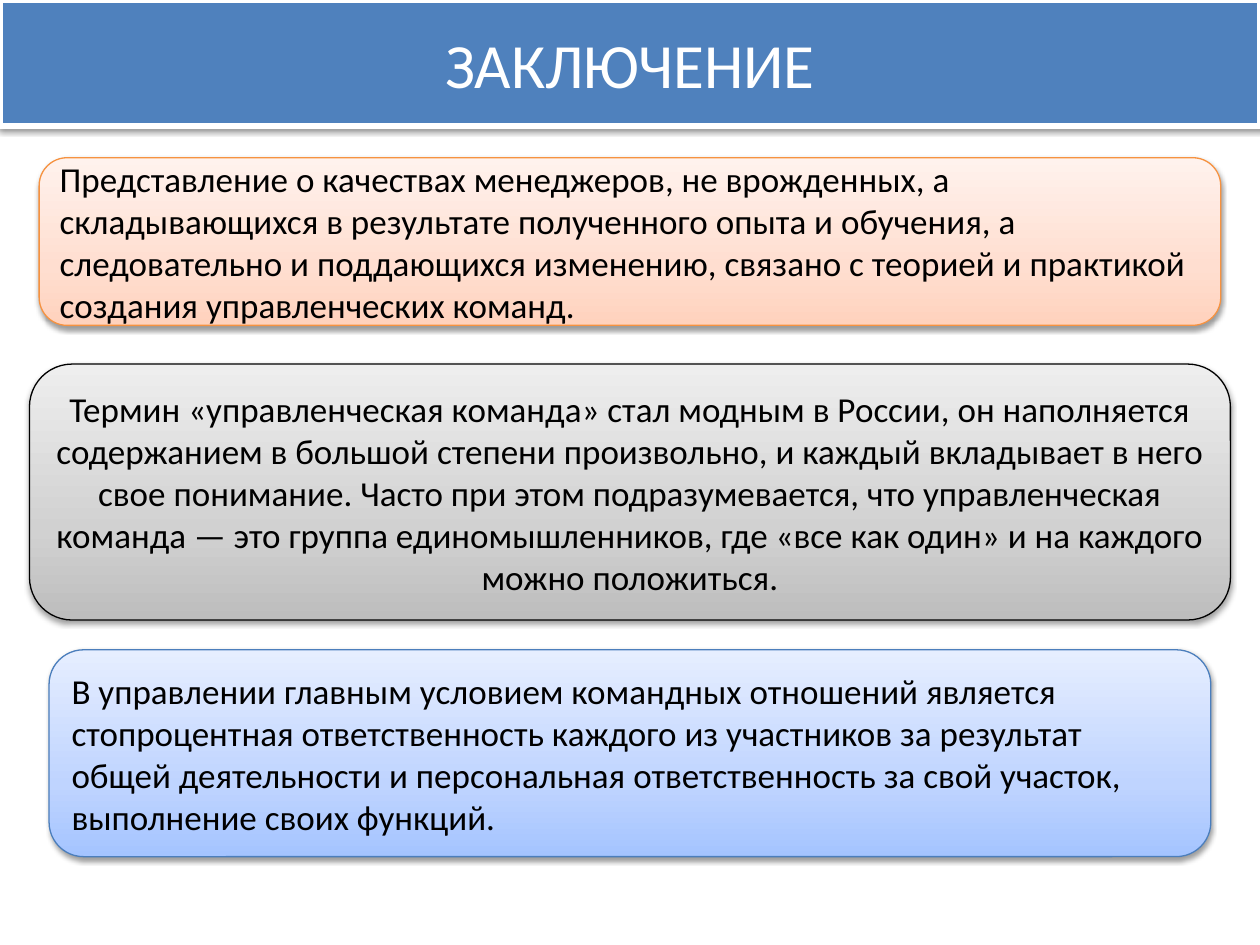
import pptx
import pptx.dml.color
import pptx.enum.shapes
import pptx.enum.text
import pptx.oxml
import pptx.oxml.ns
import pptx.util
from lxml import etree

Cm, Pt = pptx.util.Cm, pptx.util.Pt
qn = pptx.oxml.ns.qn
ALIGN = pptx.enum.text.PP_ALIGN

HUES = {
    "white": "FFFFFF", "black": "000000", "blue": "4F81BD",
    "orange": "F69240", "navy": "4B7EBC",
}
FADES = {
    "orange": ("FFD2BD", "FFDED0", "FFF2ED"),
    "black": ("BDBDBD", "D1D1D1", "EEEEEE"),
    "navy": ("A4C4FF", "BFD4FF", "E6EEFF"),
}
STOPS = (0, 35, 100)
WIDE, HIGH = 25.4, 19.05
HEAD = "ЗАКЛЮЧЕНИЕ"
CARDS = [
    ("orange", 3.18, 23.82, 3.38, ALIGN.LEFT,
     "Представление о качествах менеджеров, не врожденных, а складывающихся "
     "в результате полученного опыта и обучения, а следовательно и "
     "поддающихся изменению, связано с теорией и практикой создания "
     "управленческих команд."),
    ("black", 7.34, 24.21, 5.16, ALIGN.CENTER,
     "Термин «управленческая команда» стал модным в России, он наполняется "
     "содержанием в большой степени произвольно, и каждый вкладывает в него "
     "свое понимание. Часто при этом подразумевается, что управленческая "
     "команда — это группа единомышленников, где «все как один» и на каждого "
     "можно положиться."),
    ("navy", 13.1, 23.42, 4.17, ALIGN.LEFT,
     "В управлении главным условием командных отношений является "
     "стопроцентная ответственность каждого из участников за результат общей "
     "деятельности и персональная ответственность за свой участок, "
     "выполнение своих функций."),
]


def tint(name):
    return pptx.dml.color.RGBColor.from_string(HUES[name])


def frame(shape, top, wide, high):
    shape.left, shape.top = Cm((WIDE - wide) / 2), Cm(top)
    shape.width, shape.height = Cm(wide), Cm(high)


def edge(shape, hue, size):
    shape.line.color.rgb = tint(hue)
    shape.line.width = Pt(size)
    shape.shadow.inherit = False
    glow = shape._element.spPr.find(qn("a:effectLst"))
    shade = etree.SubElement(
        glow, qn("a:outerShdw"), blurRad=str(Pt(3.1)), dist=str(Pt(1.6)),
        dir="5400000", rotWithShape="0")
    color = etree.SubElement(shade, qn("a:srgbClr"), val=HUES["black"])
    etree.SubElement(color, qn("a:alpha"), val="38000")


def fade(shape, hues):
    shape.fill.gradient()
    shape.fill.gradient_angle = 90
    stops = shape._element.spPr.find(".//" + qn("a:gsLst"))
    for old in list(stops):
        stops.remove(old)
    for place, hue in zip(STOPS, hues):
        stop = etree.SubElement(stops, qn("a:gs"), pos=str(place * 1000))
        etree.SubElement(stop, qn("a:srgbClr"), val=hue)


def write(shape, text, size, hue, align):
    body = shape.text_frame
    body.word_wrap = True
    body.auto_size = pptx.enum.text.MSO_AUTO_SIZE.NONE
    body.vertical_anchor = pptx.enum.text.MSO_ANCHOR.MIDDLE
    para = body.paragraphs[0]
    para.alignment = align
    run = para.add_run()
    run.text = text
    run.font.name = "Calibri"
    run.font.size = Pt(size)
    run.font.color.rgb = tint(hue)


def main():
    deck = pptx.Presentation()
    deck.slide_width, deck.slide_height = Cm(WIDE), Cm(HIGH)
    slide = deck.slides.add_slide(deck.slide_layouts[5])

    title = slide.shapes.title
    frame(title, 0, WIDE, 2.54)
    title.fill.solid()
    title.fill.fore_color.rgb = tint("blue")
    edge(title, "white", 3)
    write(title, HEAD, 36, "white", ALIGN.CENTER)

    kind = pptx.enum.shapes.MSO_SHAPE.ROUNDED_RECTANGLE
    for hue, top, wide, high, align, text in CARDS:
        card = slide.shapes.add_shape(kind, 0, 0, 0, 0)
        frame(card, top, wide, high)
        fade(card, FADES[hue])
        edge(card, hue, 0.75)
        write(card, text, 20, "black", align)

    deck.save("out.pptx")


if __name__ == "__main__":
    main()
